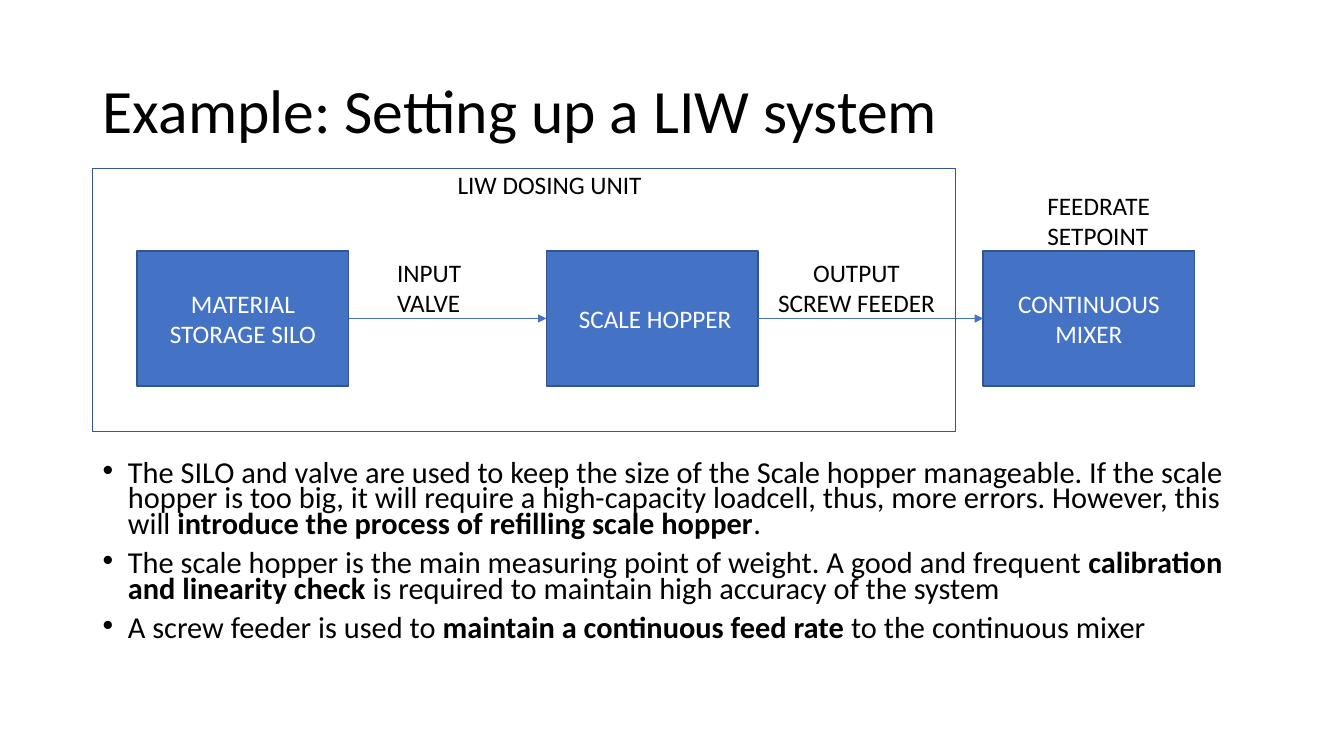
from lxml.etree import SubElement
from pptx import Presentation
from pptx.dml.color import RGBColor
from pptx.enum.shapes import MSO_CONNECTOR, MSO_SHAPE
from pptx.enum.text import MSO_ANCHOR, MSO_AUTO_SIZE, PP_ALIGN
from pptx.oxml.ns import qn
from pptx.util import Inches, Pt

BLACK = RGBColor(0x00, 0x00, 0x00)
WHITE = RGBColor(0xFF, 0xFF, 0xFF)
BLUE = RGBColor(0x44, 0x72, 0xC4)
DARK_BLUE = RGBColor(0x32, 0x54, 0x91)
FONT = "Calibri"

TITLE = "Example: Setting up a LIW system"
STAGES = [  # text, left
    ("MATERIAL STORAGE SILO", 1.36),
    (" SCALE HOPPER", 5.42),
    ("CONTINUOUS MIXER", 9.75),
]
STAGE_TOP, STAGE_WIDTH, STAGE_HEIGHT = 2.49, 2.1, 1.34
DOSING_UNIT = (0.92, 1.67, 8.56, 2.61)
LABELS = [  # text, (left, top, width, height), alignment
    ("INPUT VALVE", (3.84, 2.5, 1.15, 0.71), PP_ALIGN.LEFT),
    ("OUTPUT SCREW FEEDER", (7.58, 2.5, 1.83, 0.71), PP_ALIGN.CENTER),
    ("LIW DOSING UNIT", (4.44, 1.63, 2.37, 0.4), PP_ALIGN.LEFT),
    ("FEEDRATE SETPOINT", (10.29, 1.84, 1.43, 0.71), PP_ALIGN.LEFT),
]
NOTES_BOX = (0.92, 4.54, 11.5, 2.21)
NOTES = [  # plain, bold, plain
    ("The SILO and valve are used to keep the size of the Scale hopper manageable. "
     "If the scale hopper is too big, it will require a high-capacity loadcell, thus, "
     "more errors. However, this will ",
     "introduce the process of refilling scale hopper", "."),
    ("The scale hopper is the main measuring point of weight. A good and frequent ",
     "calibration and linearity check ",
     "is required to maintain high accuracy of the system"),
    ("A screw feeder is used to ", "maintain a continuous feed rate",
     " to the continuous mixer"),
]


def inches(box):
    return [Inches(length) for length in box]


def add_run(paragraph, text, size, color=BLACK, bold=False):
    run = paragraph.add_run()
    run.text = text
    font = run.font
    font.name, font.size, font.bold = FONT, Pt(size), bold
    font.color.rgb = color


def add_rectangle(slide, box, fill=None):
    rectangle = slide.shapes.add_shape(MSO_SHAPE.RECTANGLE, *inches(box))
    rectangle.shadow.inherit = False
    if fill is None:
        rectangle.fill.background()
    else:
        rectangle.fill.solid()
        rectangle.fill.fore_color.rgb = fill
    rectangle.line.color.rgb = DARK_BLUE
    rectangle.line.width = Pt(1)
    return rectangle


def add_stage(slide, text, left):
    stage = add_rectangle(slide, (left, STAGE_TOP, STAGE_WIDTH, STAGE_HEIGHT), BLUE)
    frame = stage.text_frame
    frame.word_wrap = True
    frame.vertical_anchor = MSO_ANCHOR.MIDDLE
    frame.paragraphs[0].alignment = PP_ALIGN.CENTER
    add_run(frame.paragraphs[0], text, 18, WHITE)
    return stage


def add_flow(slide, source, target):
    """Arrow from the right side of source to the left side of target."""
    flow = slide.shapes.add_connector(MSO_CONNECTOR.STRAIGHT, 0, 0, 0, 0)
    flow.begin_connect(source, 3)
    flow.end_connect(target, 1)
    flow.line.color.rgb = BLUE
    flow.line.width = Pt(0.5)
    SubElement(flow.line._get_or_add_ln(), qn("a:tailEnd"), type="triangle")
    SubElement(flow._element.spPr, qn("a:effectLst"))


def add_text_frame(slide, box):
    frame = slide.shapes.add_textbox(*inches(box)).text_frame
    frame.word_wrap = True
    return frame


def add_label(slide, text, box, alignment):
    frame = add_text_frame(slide, box)
    frame.auto_size = MSO_AUTO_SIZE.SHAPE_TO_FIT_TEXT
    frame.paragraphs[0].alignment = alignment
    add_run(frame.paragraphs[0], text, 18)


def add_notes(slide):
    frame = add_text_frame(slide, NOTES_BOX)
    for index, parts in enumerate(NOTES):
        note = frame.add_paragraph() if index else frame.paragraphs[0]
        note.line_spacing = 0.7
        note.space_before = Pt(10)
        properties = note._p.get_or_add_pPr()
        properties.set("marL", str(Inches(0.25)))
        properties.set("indent", str(-Inches(0.25)))
        SubElement(properties, qn("a:buFont"), typeface="Arial")
        SubElement(properties, qn("a:buChar"), char="•")
        for text, bold in zip(parts, (False, True, False)):
            add_run(note, text, 21.7, bold=bold)


def set_title(slide):
    title = slide.shapes.title
    title.left, title.top, title.width, title.height = inches((0.92, 0.4, 11.5, 1.45))
    frame = title.text_frame
    frame.auto_size = MSO_AUTO_SIZE.NONE
    frame.vertical_anchor = MSO_ANCHOR.MIDDLE
    heading = frame.paragraphs[0]
    heading.alignment = PP_ALIGN.LEFT
    heading.line_spacing = 0.9
    add_run(heading, TITLE, 44)


def main():
    deck = Presentation()
    deck.slide_width, deck.slide_height = inches((13.33, 7.5))
    slide = deck.slides.add_slide(deck.slide_layouts[5])
    set_title(slide)
    add_notes(slide)
    stages = [add_stage(slide, *stage) for stage in STAGES]
    for source, target in zip(stages, stages[1:]):
        add_flow(slide, source, target)
    add_rectangle(slide, DOSING_UNIT)
    for label in LABELS:
        add_label(slide, *label)
    deck.save("out.pptx")


if __name__ == "__main__":
    main()
